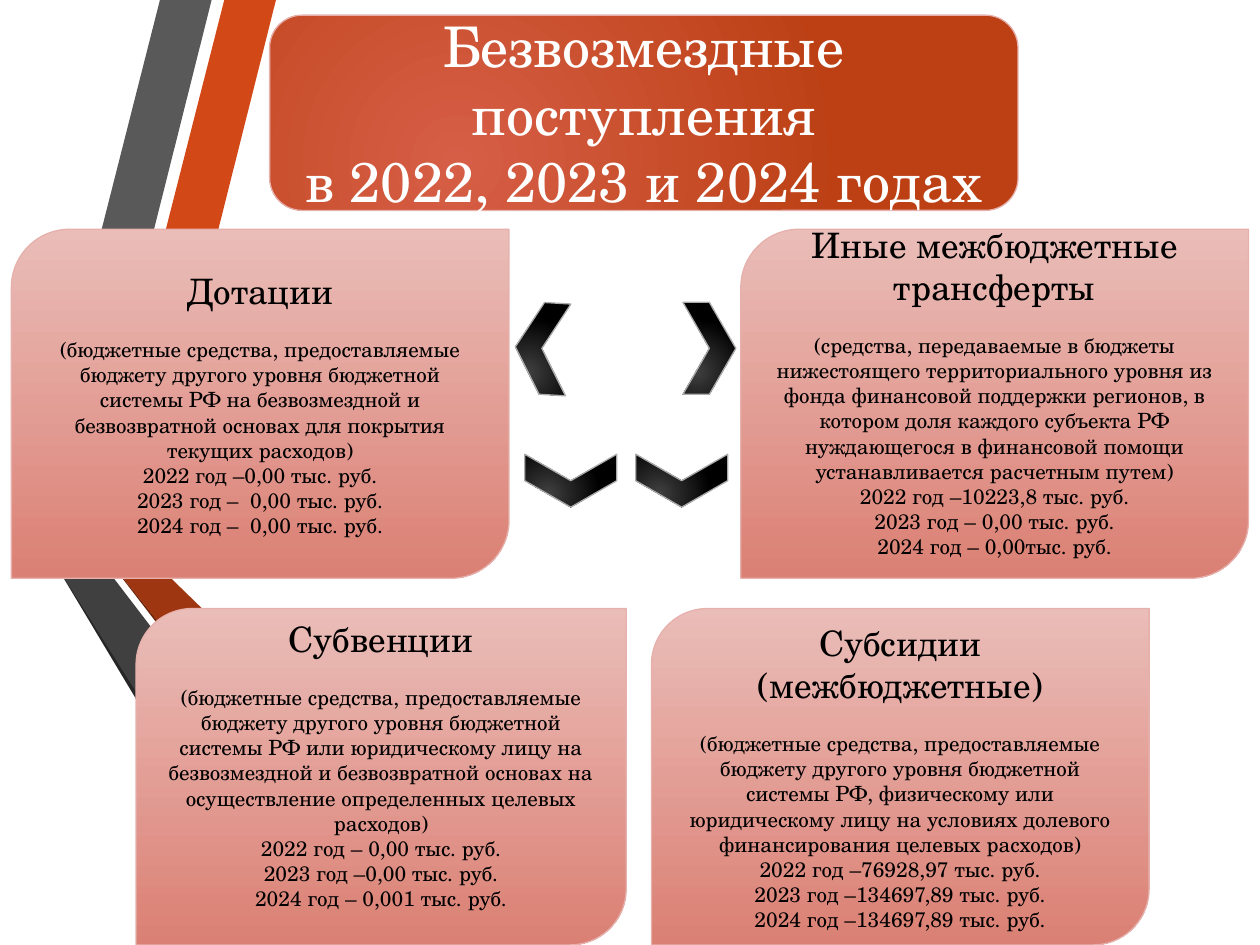
from dataclasses import dataclass

from lxml import etree
from pptx import Presentation
from pptx.dml.color import RGBColor
from pptx.enum.shapes import MSO_SHAPE
from pptx.enum.text import MSO_ANCHOR, PP_ALIGN
from pptx.oxml.ns import qn
from pptx.util import Inches, Pt

ROUND = MSO_SHAPE.ROUNDED_RECTANGLE
LEAF = MSO_SHAPE.ROUND_2_DIAG_RECTANGLE
CHEVRON = MSO_SHAPE.CHEVRON
MIDDLE = MSO_ANCHOR.MIDDLE
CENTER = PP_ALIGN.CENTER


@dataclass(frozen=True)
class Theme:
    font: str = "TeX Gyre Schola"
    title: int = 32
    head: int = 20
    body: int = 12
    gap: float = 14.4
    line: float = 0.75
    white: str = "FFFFFF"
    black: str = "000000"
    rim: str = "E6B1AC"
    edge: str = "ABABAB"
    banner: tuple = ("D65E46", "BC4014")
    card: tuple = ("EABDB8", "DB8074")
    arrow: tuple = ("404040", "000000")


class Deck:
    """Draws styled elements on the current slide."""

    def __init__(self, prs, theme):
        self.theme = theme
        self.slide = prs.slides.add_slide(prs.slide_layouts[6])

    def band(self, color, points):
        spots = [(Inches(x), Inches(y)) for x, y in points]
        pen = self.slide.shapes.build_freeform(*spots[0])
        pen.add_line_segments(spots[1:])
        shape = pen.convert_to_shape()
        shape.shadow.inherit = False
        shape.fill.solid()
        shape.fill.fore_color.rgb = RGBColor.from_string(color)
        shape.line.fill.background()

    def block(self, kind, box, colors, rim, radial=False):
        shape = self.slide.shapes.add_shape(kind, *map(Inches, box))
        shape.shadow.inherit = False
        shape.fill.gradient()
        shape.fill.gradient_angle = 270
        for stop, color, place in zip(shape.fill.gradient_stops, colors, (0, 1)):
            stop.color.rgb = RGBColor.from_string(color)
            stop.position = place
        if radial:
            grad = shape.element.spPr.find(qn("a:gradFill"))
            grad.remove(grad.find(qn("a:lin")))
            focus = etree.SubElement(grad, qn("a:path"), {"path": "circle"})
            sides = {"l": "50000", "t": "100000", "r": "100000", "b": "50000"}
            etree.SubElement(focus, qn("a:fillToRect"), sides)
        shape.line.color.rgb = RGBColor.from_string(rim)
        shape.line.width = Pt(self.theme.line)
        return shape

    def label(self, shape, lines, color):
        frame = shape.text_frame
        frame.word_wrap = True
        frame.vertical_anchor = MIDDLE
        frame.text = "\n".join(text for text, _ in lines)
        for para, (_, size) in zip(frame.paragraphs, lines):
            para.alignment = CENTER
            para.font.name = self.theme.font
            para.font.size = Pt(size)
            para.font.color.rgb = RGBColor.from_string(color)
        return frame

    def banner(self, box, lines):
        look = self.theme
        shape = self.block(ROUND, box, look.banner, look.rim, radial=True)
        self.label(shape, [(text, look.title) for text in lines], look.white)

    def card(self, box, foot, head, *body):
        look = self.theme
        shape = self.block(LEAF, box, look.card, look.rim)
        lines = [(head, look.head)] + [(text, look.body) for text in body]
        frame = self.label(shape, lines, look.black)
        frame.paragraphs[0].space_after = Pt(look.gap)
        frame.margin_bottom = Inches(foot)

    def arrow(self, x, y, turn):
        look = self.theme
        box = (x, y, 0.42, 0.73)
        shape = self.block(CHEVRON, box, look.arrow, look.edge, radial=True)
        shape.rotation = turn


BANDS = [
    ("D34817", [(0.7, 4.24), (1.1, 4.34), (2.19, 0), (1.78, 0)]),
    ("595959", [(1.68, 0), (1.27, 0), (0.22, 4.13), (0.62, 4.22)]),
    ("262626", [(0.23, 4.13), (2.25, 7.5), (2.35, 7.5)]),
    ("69240C", [(3.3, 7.5), (0.71, 4.25), (3.21, 7.5)]),
    ("9E3611", [(0.7, 4.24), (3.3, 7.5), (4.35, 7.5), (1.1, 4.34)]),
    ("404040", [(3.13, 7.5), (0.62, 4.22), (0.22, 4.13), (2.35, 7.5)]),
]

CARDS = [
    ((0.09, 1.82, 3.95, 2.77), 0.05, "Дотации",
     "(бюджетные средства, предоставляемые бюджету другого уровня бюджетной "
     "системы РФ на безвозмездной и безвозвратной основах для покрытия "
     "текущих расходов)",
     "2022 год –0,00 тыс. руб.",
     "2023 год –  0,00 тыс. руб.",
     "2024 год –  0,00 тыс. руб."),
    ((1.08, 4.83, 3.89, 2.67), 0.25, "Субвенции",
     "(бюджетные средства, предоставляемые бюджету другого уровня бюджетной "
     "системы РФ или юридическому лицу на безвозмездной и безвозвратной "
     "основах на осуществление определенных целевых расходов)",
     "2022 год – 0,00 тыс. руб.",
     "2023 год –0,00 тыс. руб.",
     "2024 год – 0,001 тыс. руб."),
    ((5.17, 4.83, 3.95, 2.67), 0.05, "Субсидии (межбюджетные)",
     "(бюджетные средства, предоставляемые бюджету другого уровня бюджетной "
     "системы РФ, физическому или юридическому лицу на условиях долевого "
     "финансирования целевых расходов)",
     "2022 год –76928,97 тыс. руб.",
     "2023 год –134697,89 тыс. руб.",
     "2024 год –134697,89 тыс. руб."),
    ((5.88, 1.82, 4.03, 2.77), 0.25, "Иные межбюджетные трансферты",
     "(средства, передаваемые в бюджеты нижестоящего территориального уровня "
     "из фонда финансовой поддержки регионов, в котором доля каждого субъекта "
     "РФ нуждающегося в финансовой помощи устанавливается расчетным путем)",
     "2022 год –10223,8 тыс. руб.",
     "2023 год – 0,00 тыс. руб.",
     "2024 год – 0,00тыс. руб."),
]

ARROWS = [(5.42, 2.4, 0), (5.2, 3.45, 90), (4.32, 3.45, 90), (4.09, 2.4, 183.4)]


def main():
    prs = Presentation()
    prs.slide_width, prs.slide_height = Inches(10), Inches(7.5)
    deck = Deck(prs, Theme())
    for band in BANDS:
        deck.band(*band)
    deck.banner((2.14, 0.12, 5.94, 1.55),
                ["Безвозмездные поступления", "в 2022, 2023 и 2024 годах"])
    for card in CARDS:
        deck.card(*card)
    for arrow in ARROWS:
        deck.arrow(*arrow)
    prs.save("out.pptx")


if __name__ == "__main__":
    main()
